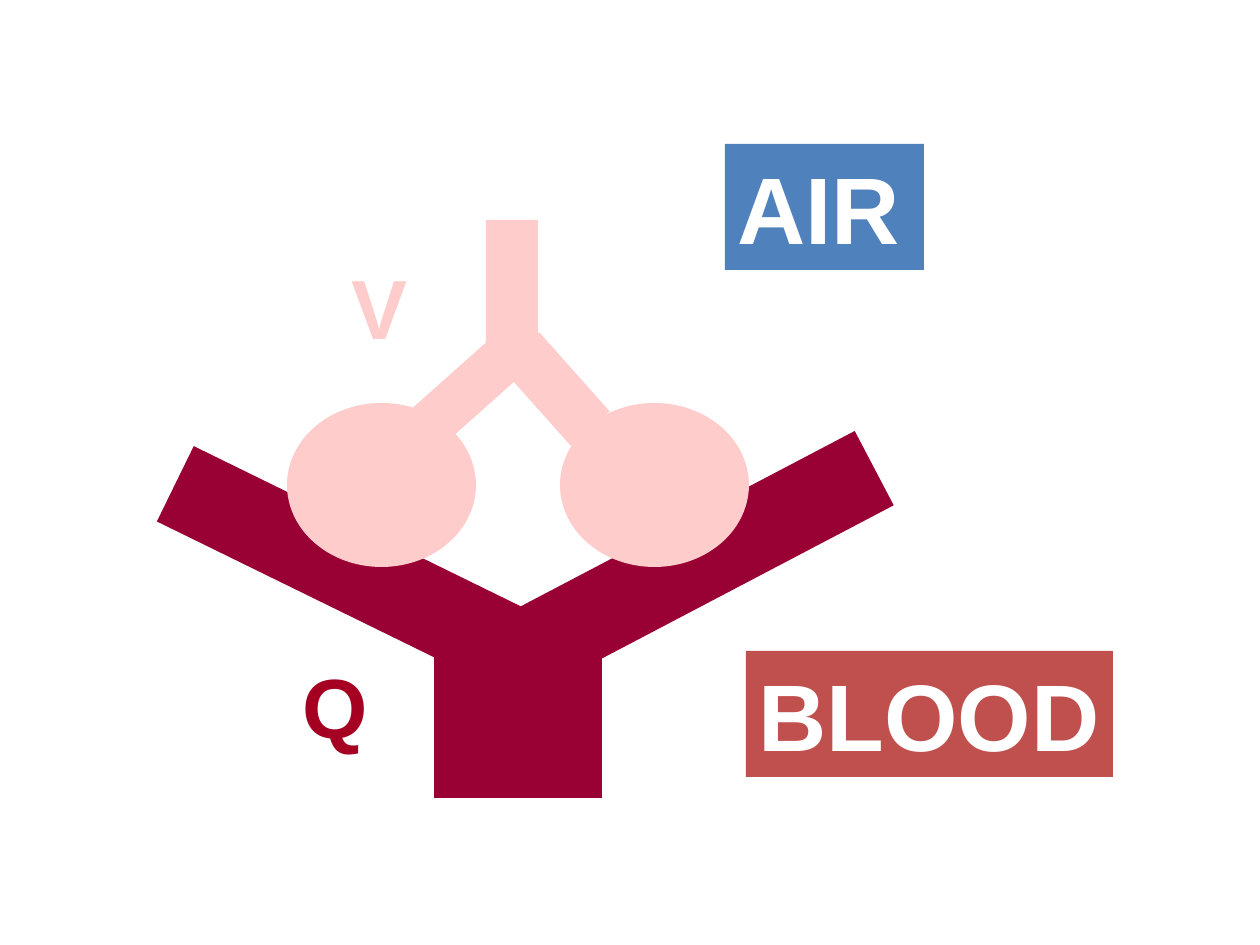
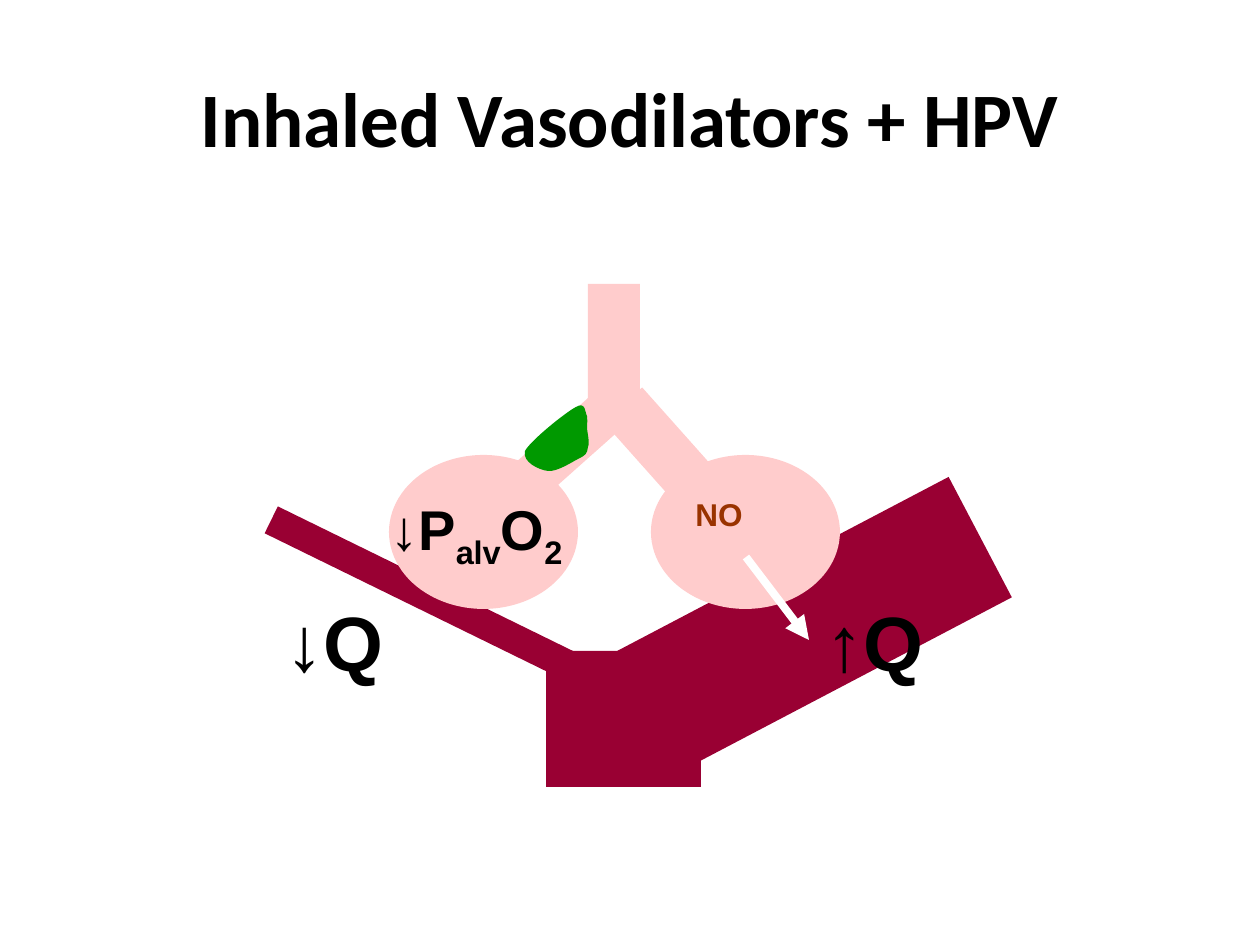
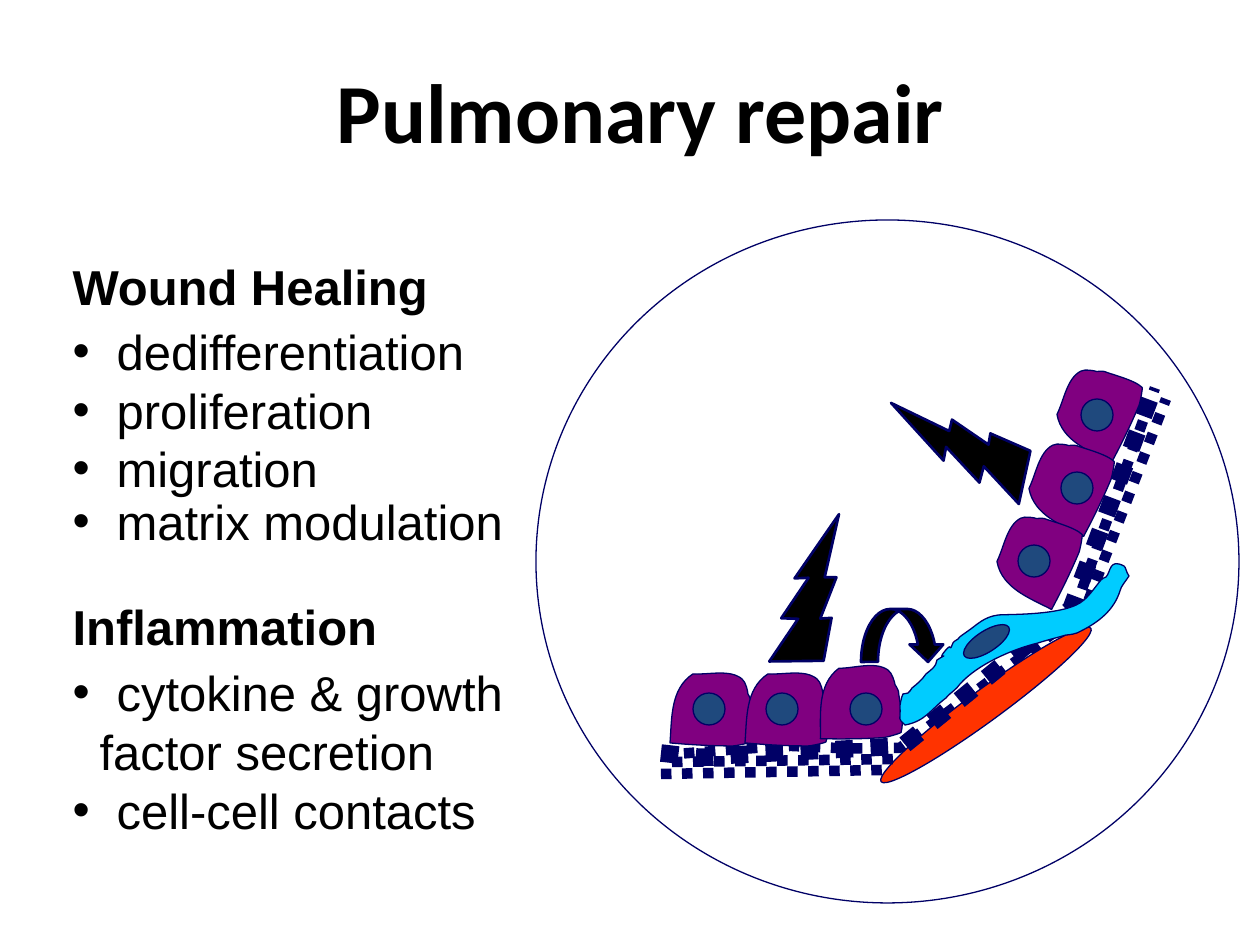
from dataclasses import dataclass

from lxml.etree import SubElement
from pptx import Presentation
from pptx.dml.color import RGBColor
from pptx.enum.dml import MSO_LINE
from pptx.enum.shapes import MSO_CONNECTOR, MSO_SHAPE as Shape
from pptx.enum.text import MSO_ANCHOR, MSO_AUTO_SIZE
from pptx.oxml.ns import qn
from pptx.util import Emu, Pt

PX = 914400 / 126


@dataclass(frozen=True)
class Theme:
    blood: str = "990033"
    airway: str = "FFCCCC"
    perfusion: str = "A50021"
    air_label: str = "4F81BD"
    blood_label: str = "C0504D"
    mucus: str = "009900"
    nitric: str = "993300"
    outline: str = "000066"
    epithelium: str = "800080"
    nucleus: str = "1F497D"
    fibroblast: str = "00CCFF"
    vessel: str = "FF3300"
    black: str = "000000"
    white: str = "FFFFFF"
    title_font: str = "Calibri"
    body_font: str = "Arial"
    body_size: int = 28
    thin: float = 0.75
    medium: float = 1.5


T = Theme()

# Lung parts: left, top, width, height, rotation
LUNG_BALANCED = {
    "blood": [(156, 525, 378, 84, 26.1), (518, 514, 378, 84, 332.3), (434, 609, 168, 189, 0)],
    "alveoli": [(287, 403, 189, 164), (560, 403, 189, 164)],
    "airway": [(486, 220, 52, 154, 0), (412, 365, 116, 48, 318.3), (502, 363, 106, 52, 228.3)],
}
LUNG_HPV = {
    "blood": [(252, 588, 378, 30, 26.1), (624, 557, 378, 136, 332.3), (546, 651, 155, 136, 0)],
    "alveoli": [(389, 455, 189, 154), (651, 455, 189, 154)],
    "airway": [(588, 284, 52, 145, 0), (514, 420, 116, 45, 318.3), (606, 416, 100, 52, 228.3)],
}

# Labels: text pieces (every second one is a subscript), box, size, colour, fill
LABELS_BALANCED = [
    (["V"], (339, 249, 86, 113), 48, T.airway, None),
    (["Q"], (290, 648, 91, 113), 48, T.perfusion, None),
    (["AIR"], (725, 144, 199, 126), 54, T.white, T.air_label),
    (["BLOOD"], (746, 651, 367, 126), 54, T.white, T.blood_label),
]
LABELS_HPV = [
    (["↓P", "alv", "O", "2"], (378, 488, 214, 81), 32, T.black, None),
    (["↓Q"], (273, 588, 132, 105), 44, T.black, None),
    (["NO"], (683, 489, 139, 88), 18, T.nitric, None),
    (["↑Q"], (813, 588, 132, 105), 44, T.black, None),
]
NO_ARROW = ((746, 557), (809, 640))

# Outlines: a start point, then line ends (x, y) or curves (x1, y1, x2, y2, x, y)
MUCUS_PLUG = [
    (525, 451), (522, 462, 539, 470, 548, 471), (557, 472, 572, 462, 578, 459),
    (586, 455, 587, 454, 588, 447), (590, 442, 587, 432, 587, 427),
    (587, 422, 588, 420, 587, 416), (585, 413, 586, 401, 576, 407),
    (566, 412, 530, 441, 525, 451),
]
CELL = [
    (-43, 36), (-41, 12, -43, -18, -20, -33), (-4, -32, 17, -38, 29, -28),
    (33, -25, 35, -15, 35, -13), (37, -10, 38, -6, 38, -6), (38, 1, 42, 25, 38, 35),
    (37, 36, 23, 39, 20, 39), (-1, 39, -21, 38, -43, 36),
]
FIBROBLAST = [
    (905, 725), (926, 721, 931, 709, 946, 698), (951, 692, 956, 690, 960, 684),
    (978, 664, 1013, 649, 1038, 643), (1047, 640, 1056, 638, 1066, 635),
    (1068, 635, 1077, 634, 1081, 631), (1099, 622, 1114, 610, 1120, 591),
    (1121, 586, 1126, 581, 1129, 576), (1126, 572, 1126, 567, 1124, 566),
    (1109, 558, 1111, 572, 1106, 577), (1105, 578, 1102, 578, 1101, 580),
    (1096, 586, 1090, 595, 1084, 600), (1067, 616, 1007, 614, 998, 615),
    (984, 617, 978, 624, 968, 631), (964, 634, 960, 636, 958, 639),
    (955, 640, 953, 643, 953, 643), (948, 655, 954, 640, 945, 651),
    (935, 663, 953, 650, 937, 660), (936, 667, 932, 669, 926, 674),
    (922, 680, 917, 684, 912, 688), (911, 689, 910, 692, 908, 693),
    (907, 694, 905, 693, 903, 694), (901, 698, 900, 706, 900, 706),
    (901, 722, 897, 717, 905, 725),
]
MEMBRANE = [
    (663, 755), (706, 752, 748, 748, 791, 746), (879, 750, 843, 748, 900, 748),
    (1071, 620), (1155, 388),
]
MEMBRANE_THICK = [
    (661, 753), (690, 756, 699, 759, 725, 756), (732, 755, 730, 755, 733, 755),
    (903, 746), (1071, 609), (1154, 388),
]
FIBRES = [((661, 774), (882, 770)), ((672, 762), (903, 759)), ((1081, 620), (1166, 399))]

# Epithelial cells: centre, rotation
CELLS = [
    ((713, 707), 0), ((788, 707), 0), ((861, 700), 356.3),
    ((1096, 409), 292.9), ((1068, 483), 292.9), ((1036, 556), 292.9),
]
NUCLEI = [(709, 709), (782, 709), (866, 709), (1034, 561), (1077, 488), (1097, 415)]
NUCLEUS_RADIUS = 16
BOLTS = [(746, 535, 126, 126, 154.7), (903, 388, 126, 126, 77.7)]

# Repair list: kind, text, space before
REPAIR = [
    ("heading", "Wound Healing", 0),
    ("bullet", "dedifferentiation", 12),
    ("bullet", "proliferation", 6),
    ("bullet", "migration", 5),
    ("bullet", "matrix modulation", 0),
    ("heading", "Inflammation", 52),
    ("bullet", "cytokine & growth", 13),
    ("continued", "factor secretion", 6),
    ("bullet", "cell-cell contacts", 6),
]
INDENTS = {"heading": (0, 0), "bullet": (44, -44), "continued": (27, 0)}
LIST_LINE = 53


def px(n):
    return Emu(round(n * PX))


def rgb(colour):
    return RGBColor.from_string(colour)


def paint(s, fill=None, line=None, width=T.thin):
    s.shadow.inherit = False
    if fill:
        s.fill.solid()
        s.fill.fore_color.rgb = rgb(fill)
    else:
        s.fill.background()
    if line:
        s.line.color.rgb = rgb(line)
        s.line.width = Pt(width)
    else:
        s.line.fill.background()
    return s


def style_run(r, font, size, colour, bold=True):
    r.font.name, r.font.size, r.font.bold = font, Pt(size), bold
    r.font.color.rgb = rgb(colour)


def place(s, box):
    s.left, s.top, s.width, s.height = map(px, box)


def add_preset(slide, kind, box, fill, line=None, width=T.thin):
    """Box is left, top, width, height and, if turned, the rotation."""
    s = slide.shapes.add_shape(kind, *map(px, box[:4]))
    s.rotation = box[4] if len(box) > 4 else 0
    return paint(s, fill, line, width)


def add_outline(slide, outline, origin=(0, 0), close=True):
    """Draw every point as a line end, then join each curve's three points into a Bézier."""
    start, *points = [
        (px(origin[0] + seg[i]), px(origin[1] + seg[i + 1]))
        for seg in outline for i in range(0, len(seg), 2)
    ]
    builder = slide.shapes.build_freeform(*start, scale=1.0)
    builder.add_line_segments(points, close=close)
    s = builder.convert_to_shape()
    ends = iter(list(s._element.iter(qn("a:lnTo"))))
    for seg in outline[1:]:
        first = next(ends)
        if len(seg) == 6:
            first.tag = qn("a:cubicBezTo")
            for _ in range(2):
                end = next(ends)
                first.append(end[0])
                end.getparent().remove(end)
    return s


def add_line(slide, start, end, colour, width):
    s = slide.shapes.add_connector(MSO_CONNECTOR.STRAIGHT, *map(px, start + end))
    s.line.color.rgb = rgb(colour)
    s.line.width = Pt(width)
    SubElement(s._element.spPr, qn("a:effectLst"))
    return s


def add_membrane(slide, outline, width):
    s = paint(add_outline(slide, outline, close=False), None, T.outline, width)
    s.line.dash_style = MSO_LINE.ROUND_DOT


def add_label(slide, pieces, box, size, colour, fill):
    s = slide.shapes.add_textbox(*map(px, box))
    if fill:
        s.fill.solid()
        s.fill.fore_color.rgb = rgb(fill)
    tf = s.text_frame
    tf.word_wrap, tf.margin_right = True, 0
    for i, piece in enumerate(pieces):
        r = tf.paragraphs[0].add_run()
        r.text = piece
        style_run(r, T.body_font, size, colour)
        if i % 2:
            r._r.get_or_add_rPr().set("baseline", "-25000")


def set_title(slide, text, box, size):
    s = slide.shapes.title
    place(s, box)
    s.text_frame.text = text
    style_run(s.text_frame.paragraphs[0].runs[0], T.title_font, size, T.black)


def fill_list(s, items, box):
    place(s, box)
    tf = s.text_frame
    tf.word_wrap, tf.auto_size = True, MSO_AUTO_SIZE.NONE
    tf.vertical_anchor = MSO_ANCHOR.TOP
    tf.margin_top, tf.margin_right = px(18), 0
    tf.text = "\n".join(text for _, text, _ in items)
    for p, (kind, _, gap) in zip(tf.paragraphs, items):
        p.line_spacing = Pt(px(LIST_LINE).pt)
        p.space_before, p.space_after = Pt(px(gap).pt), Pt(0)
        pPr = p._p.get_or_add_pPr()
        margin, indent = INDENTS[kind]
        pPr.set("marL", str(px(margin)))
        pPr.set("indent", str(px(indent)))
        if kind == "bullet":
            SubElement(pPr, qn("a:buChar"), char="•")
        else:
            SubElement(pPr, qn("a:buNone"))
        style_run(p.runs[0], T.body_font, T.body_size, T.black, kind == "heading")


def draw_lung(slide, lung):
    for box in lung["blood"]:
        add_preset(slide, Shape.RECTANGLE, box, T.blood)
    for box in lung["alveoli"]:
        add_preset(slide, Shape.OVAL, box, T.airway)
    for box in lung["airway"]:
        add_preset(slide, Shape.RECTANGLE, box, T.airway)


def balanced_slide(prs):
    slide = prs.slides.add_slide(prs.slide_layouts[6])
    draw_lung(slide, LUNG_BALANCED)
    for label in LABELS_BALANCED:
        add_label(slide, *label)


def vasodilator_slide(prs):
    slide = prs.slides.add_slide(prs.slide_layouts[5])
    set_title(slide, "Inhaled Vasodilators + HPV", (63, 38, 1134, 158), 44)
    draw_lung(slide, LUNG_HPV)
    paint(add_outline(slide, MUCUS_PLUG), T.mucus)
    for label in LABELS_HPV:
        add_label(slide, *label)
    arrow = add_line(slide, *NO_ARROW, T.white, 4.5)
    SubElement(arrow._element.spPr.find(qn("a:ln")), qn("a:tailEnd"), type="triangle")


def repair_slide(prs):
    slide = prs.slides.add_slide(prs.slide_layouts[1])
    set_title(slide, "Pulmonary repair", (105, 31, 1071, 158), 48)
    fill_list(slide.placeholders[1], REPAIR, (60, 244, 456, 601))

    add_preset(slide, Shape.OVAL, (536, 220, 703, 683), T.white, T.outline)
    add_membrane(slide, MEMBRANE, 6)
    add_preset(slide, Shape.OVAL, (856, 689, 260, 32, 323.8), T.vessel, T.outline)
    for start, end in FIBRES:
        add_line(slide, start, end, T.outline, 6).line.dash_style = MSO_LINE.ROUND_DOT
    add_membrane(slide, MEMBRANE_THICK, 10)

    for centre, angle in CELLS:
        cell = paint(add_outline(slide, CELL, centre), T.epithelium, T.outline)
        cell.rotation = angle
    for x, y in NUCLEI:
        r = NUCLEUS_RADIUS
        add_preset(slide, Shape.OVAL, (x - r, y - r, 2 * r, 2 * r), T.nucleus, T.outline)
    paint(add_outline(slide, FIBROBLAST), T.fibroblast, T.outline)
    add_preset(slide, Shape.OVAL, (976, 615, 21, 53, 57.1), T.nucleus, T.outline)

    for box in BOLTS:
        bolt = add_preset(slide, Shape.LIGHTNING_BOLT, box, T.black, T.outline, T.medium)
        bolt._element.spPr.xfrm.set("flipH", "1")
    arrow = add_preset(slide, Shape.CURVED_DOWN_ARROW, (861, 609, 84, 53),
                       T.black, T.outline, T.medium)
    for i, value in enumerate((0.32, 0.64, 0.33)):
        arrow.adjustments[i] = value


def main():
    prs = Presentation()
    prs.slide_width, prs.slide_height = px(1260), px(945)
    balanced_slide(prs)
    vasodilator_slide(prs)
    repair_slide(prs)
    prs.save("out.pptx")


if __name__ == "__main__":
    main()
